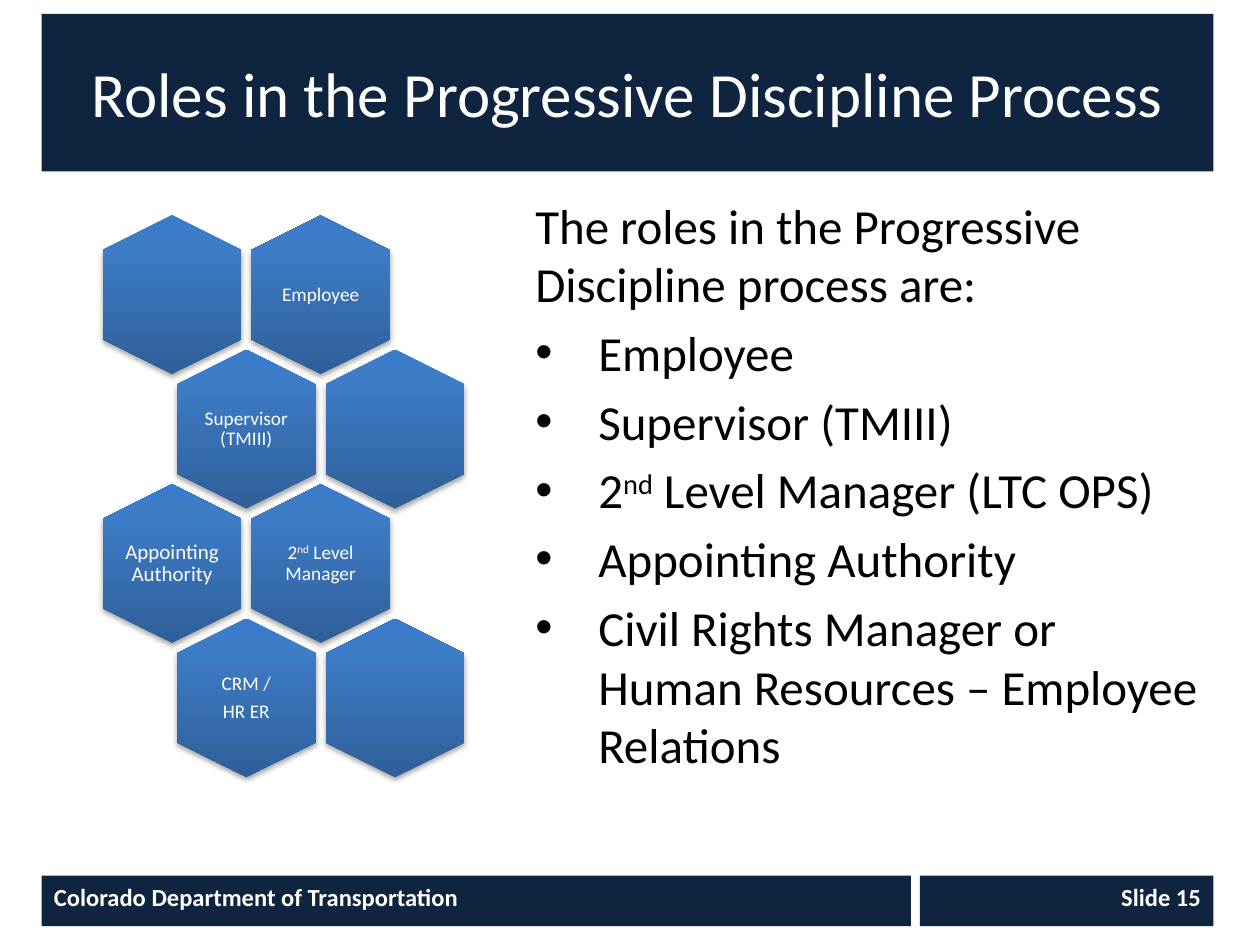
from dataclasses import dataclass

from lxml.etree import SubElement
from pptx import Presentation
from pptx.dml.color import RGBColor as RGB
from pptx.enum.shapes import MSO_SHAPE as SHAPE
from pptx.enum.text import MSO_ANCHOR as ANCHOR, MSO_AUTO_SIZE as AUTO, PP_ALIGN as ALIGN
from pptx.oxml import parse_xml
from pptx.oxml.ns import nsdecls, qn
from pptx.util import Inches, Pt

COLS, ROWS = 100, 75
UNIT = Inches(10) / COLS


@dataclass(frozen=True)
class Theme:
    font: str = "Calibri"
    navy: str = "0F243E"
    white: str = "FFFFFF"
    black: str = "000000"
    blend: tuple = ((0, "2F5F99"), (80, "3D7CC7"), (100, "3A7CCB"))
    head: int = 36
    body: int = 28
    foot: int = 14
    cell: int = 11
    large: int = 12


@dataclass(frozen=True)
class Box:
    """A place on the grid, in columns and rows."""
    x: float
    y: float
    w: float
    h: float

    def emu(self):
        return [round(n * UNIT) for n in (self.x, self.y, self.w, self.h)]


THEME = Theme()
LEFT, WIDE = 3.3, 93
ROLES = ["Employee", "Supervisor (TMIII)", "2^nd^ Level Manager (LTC OPS)",
         "Appointing Authority",
         "Civil Rights Manager or Human Resources – Employee Relations"]
CELLS = [[None, "Employee"],
         ["Supervisor (TMIII)", None],
         ["Appointing Authority", "2^nd^ Level Manager"],
         ["CRM /\nHR ER", None]]


def write(par, text, size, color, bold=False, align=ALIGN.LEFT):
    """Fill a paragraph; text between carets is raised."""
    par.alignment = align
    for i, part in enumerate(text.split("^")):
        run = par.add_run()
        run.text = part
        font = run.font
        font.name, font.size, font.bold = THEME.font, Pt(size), bold
        font.color.rgb = RGB.from_string(color)
        if i % 2:
            font._element.set("baseline", "30000")


def paint(shape):
    shape.fill.solid()
    shape.fill.fore_color.rgb = RGB.from_string(THEME.navy)


def title(slide, box):
    head = slide.shapes.title
    head.left, head.top, head.width, head.height = box.emu()
    paint(head)
    frame = head.text_frame
    frame.auto_size, frame.vertical_anchor = AUTO.NONE, ANCHOR.MIDDLE
    write(frame.paragraphs[0], "Roles in the Progressive Discipline Process",
          THEME.head, THEME.white, align=ALIGN.CENTER)


def bullet(par):
    props = par._p.get_or_add_pPr()
    props.set("marL", str(Inches(0.5)))
    props.set("indent", str(-Inches(0.5)))
    SubElement(props, qn("a:buFont")).set("typeface", "Arial")
    SubElement(props, qn("a:buChar")).set("char", "•")


def roles(slide, box):
    frame = slide.shapes.add_textbox(*box.emu()).text_frame
    frame.word_wrap = True
    lines = ["The roles in the Progressive Discipline process are:", *ROLES]
    for i, line in enumerate(lines):
        par = frame.add_paragraph() if i else frame.paragraphs[0]
        par.space_before = Pt(0.2 * THEME.body)
        write(par, line, THEME.body, THEME.black)
        if i:
            bullet(par)


def shade(shape):
    """Give a cell its upright gradient and soft shadow."""
    shape.line.fill.background()
    stops = "".join(f'<a:gs pos="{pos * 1000}"><a:srgbClr val="{rgb}"/></a:gs>'
                    for pos, rgb in THEME.blend)
    props = shape._element.spPr
    props.find(qn("a:ln")).addprevious(parse_xml(
        f'<a:gradFill {nsdecls("a")} rotWithShape="0"><a:gsLst>{stops}</a:gsLst>'
        '<a:lin ang="16200000" scaled="0"/></a:gradFill>'))
    shape.shadow.inherit = False
    props.find(qn("a:effectLst")).append(parse_xml(
        f'<a:outerShdw {nsdecls("a")} blurRad="{Pt(3.1)}" dist="{Pt(1.8)}" '
        f'dir="5400000" rotWithShape="0"><a:srgbClr val="{THEME.black}">'
        '<a:alpha val="35000"/></a:srgbClr></a:outerShdw>'))


def label(group, text, box):
    frame = group.shapes.add_textbox(*box.emu()).text_frame
    frame.word_wrap, frame.vertical_anchor = True, ANCHOR.MIDDLE
    frame.margin_left = frame.margin_right = 0
    frame.margin_top = frame.margin_bottom = 0
    size = THEME.large if text.startswith("Appointing") else THEME.cell
    for i, line in enumerate(text.split("\n")):
        par = frame.add_paragraph() if i else frame.paragraphs[0]
        par.line_spacing, par.space_after = 0.9, Pt(0.35 * size)
        write(par, line, size, THEME.white, align=ALIGN.CENTER)


def comb(slide, box):
    """Rows of hexagons, every second row moved half a step right."""
    group = slide.shapes.add_group_shape()
    long, short = 12.6, 11
    step = (box.w - short) / 1.5
    drop = (box.h - long) / (len(CELLS) - 1)
    for r, row in enumerate(CELLS):
        for c, text in enumerate(row):
            midx = box.x + short / 2 + (c + r % 2 / 2) * step
            midy = box.y + long / 2 + r * drop
            place = Box(midx - long / 2, midy - short / 2, long, short)
            cell = group.shapes.add_shape(SHAPE.HEXAGON, *place.emu())
            cell.adjustments[0], cell.adjustments[1] = 0.25, 1.1547
            cell.rotation = 90
            shade(cell)
            if text:
                label(group, text, Box(midx - 3.75, midy - 4.35, 7.5, 8.7))


def band(slide, box, text, align):
    bar = slide.shapes.add_shape(SHAPE.RECTANGLE, *box.emu())
    paint(bar)
    bar.line.fill.background()
    bar.shadow.inherit = False
    frame = bar.text_frame
    frame.word_wrap, frame.vertical_anchor = True, ANCHOR.TOP
    write(frame.paragraphs[0], text, THEME.foot, THEME.white, True, align)


def footer(slide, box):
    main, gap = 69, 0.7
    rest = box.w - main - gap
    band(slide, Box(box.x + main + gap, box.y, rest, box.h), "Slide 15", ALIGN.RIGHT)
    band(slide, Box(box.x, box.y, main, box.h),
         "Colorado Department of Transportation", ALIGN.LEFT)


def main():
    deck = Presentation()
    deck.slide_width, deck.slide_height = round(COLS * UNIT), round(ROWS * UNIT)
    slide = deck.slides.add_slide(deck.slide_layouts[5])
    title(slide, Box(LEFT, 1.1, WIDE, 12.5))
    roles(slide, Box(41.5, 15, LEFT + WIDE - 41.5, 54))
    footer(slide, Box(LEFT, 69.5, WIDE, 4))
    comb(slide, Box(8.15, 17.1, 28.7, 44.6))
    deck.save("out.pptx")


if __name__ == "__main__":
    main()
